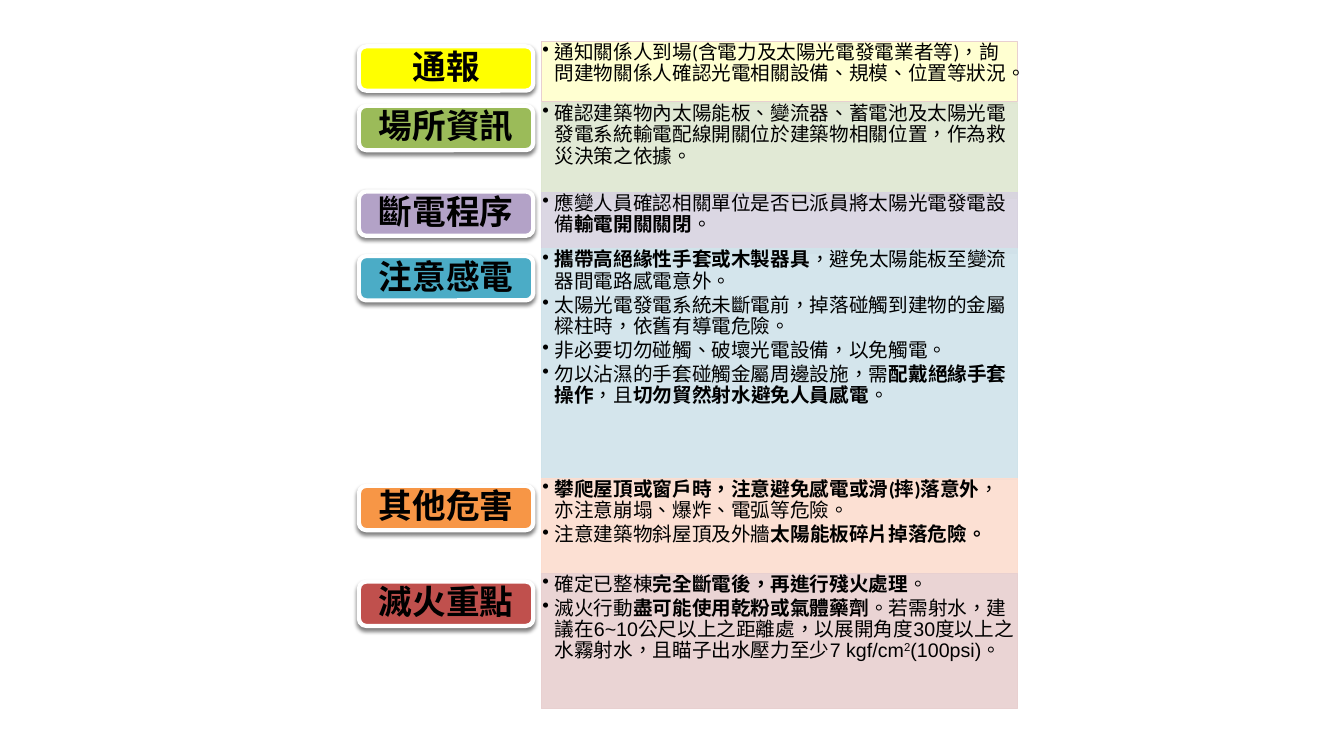
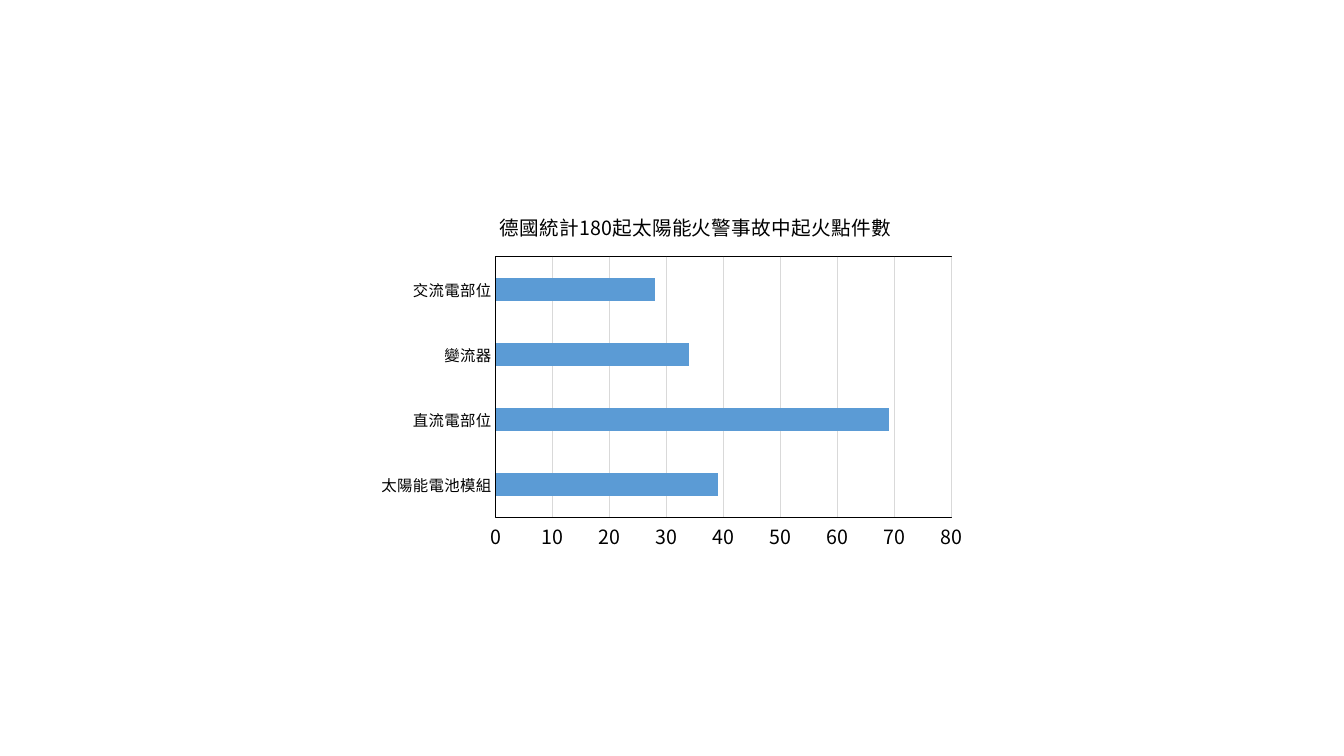
from lxml import etree
from pptx import Presentation
from pptx.chart.data import CategoryChartData
from pptx.dml.color import RGBColor
from pptx.enum.chart import XL_CHART_TYPE as ChartType, XL_TICK_MARK as TickMark
from pptx.enum.shapes import MSO_SHAPE as Shape
from pptx.enum.text import MSO_ANCHOR as Anchor, PP_ALIGN as Align
from pptx.oxml import parse_xml
from pptx.oxml.ns import nsdecls, qn
from pptx.util import Pt

SCALE = 9144
BLACK = RGBColor(0x00, 0x00, 0x00)
WHITE = RGBColor(0xFF, 0xFF, 0xFF)
YELLOW = RGBColor(0xFF, 0xFF, 0x00)
GREEN = RGBColor(0x9B, 0xBB, 0x59)
PURPLE = RGBColor(0xB3, 0xA2, 0xC7)
TEAL = RGBColor(0x4B, 0xAC, 0xC6)
ORANGE = RGBColor(0xF7, 0x96, 0x46)
RED = RGBColor(0xC0, 0x50, 0x4D)
PALE_YELLOW = RGBColor(0xFF, 0xFF, 0xCC)
PALE_GREEN = RGBColor(0xDE, 0xE7, 0xD1)
PALE_PURPLE = RGBColor(0xD8, 0xD3, 0xE0)
PALE_TEAL = RGBColor(0xD0, 0xE3, 0xEA)
PALE_ORANGE = RGBColor(0xFC, 0xDD, 0xCF)
PALE_RED = RGBColor(0xE8, 0xD0, 0xD0)
BAR_BLUE = RGBColor(0x5B, 0x9B, 0xD5)
GRID_GREY = RGBColor(0xD9, 0xD9, 0xD9)
LATIN, BRACKET, CJK = "Arial", "Calibri", "Noto Sans CJK SC"

PANEL_LEFT, PANEL_WIDTH = 537, 472
LABEL_LEFT, LABEL_WIDTH, LABEL_HEIGHT = 356, 173, 44

STEPS = [
    ("通報", 46, YELLOW, 41, 60, PALE_YELLOW, PALE_RED, BRACKET, [
        "通知關係人到場(含電力及太陽光電發電業者等)，詢問建物關係人確認光電相關設備、規模、位置等狀況。"]),
    ("場所資訊", 105, GREEN, 102, 95, PALE_GREEN, PALE_GREEN, LATIN, [
        "確認建築物內太陽能板、變流器、蓄電池及太陽光電發電系統輸電配線開關位於建築物相關位置，作為救災決策之依據。"]),
    ("斷電程序", 190, PURPLE, 191, 60, PALE_PURPLE, PALE_PURPLE, LATIN, [
        "應變人員確認相關單位是否已派員將太陽光電發電設備*輸電開關關閉*。"]),
    ("注意感電", 254, TEAL, 247, 229, PALE_TEAL, PALE_TEAL, LATIN, [
        "*攜帶高絕緣性手套或木製器具*，避免太陽能板至變流器間電路感電意外。",
        "太陽光電發電系統未斷電前，掉落碰觸到建物的金屬樑柱時，依舊有導電危險。",
        "非必要切勿碰觸、破壞光電設備，以免觸電。",
        "勿以沾濕的手套碰觸金屬周邊設施，需*配戴絕緣手套操作*，且*切勿貿然射水避免人員感電*。"]),
    ("其他危害", 482, ORANGE, 475, 94, PALE_ORANGE, PALE_ORANGE, BRACKET, [
        "*攀爬屋頂或窗戶時，注意避免感電或滑(摔)落意外*，亦注意崩塌、爆炸、電弧等危險。",
        "注意建築物斜屋頂及外牆*太陽能板碎片掉落危險。*"]),
    ("滅火重點", 577, RED, 569, 134, PALE_RED, PALE_RED, LATIN, [
        "確定已整棟*完全斷電後，再進行殘火處理*。",
        "滅火行動*盡可能使用乾粉或氣體藥劑*。若需射水，建議在6~10公尺以上之距離處，"
        "以展開角度30度以上之水霧射水，且瞄子出水壓力至少7 kgf/cm^2^(100psi)。"]),
]


def px(length):
    return length * SCALE


def apply(target, **values):
    for name, value in values.items():
        setattr(target, name, value)


def set_font(font, color=BLACK, **values):
    apply(font, **values)
    font.color.rgb = color


def manual_layout(x, y, width=None, height=None):
    sizes = {"x": x, "y": y, "w": width, "h": height}
    target = '<c:layoutTarget val="inner"/>' if width else ""
    modes = '<c:xMode val="edge"/><c:yMode val="edge"/>'
    values = "".join(f'<c:{name} val="{value}"/>'
                     for name, value in sizes.items() if value is not None)
    return parse_xml(f'<c:layout {nsdecls("c")}><c:manualLayout>{target}{modes}{values}'
                     '</c:manualLayout></c:layout>')


def place_layout(element, layout, after=None):
    for old in element.findall(qn("c:layout")):
        element.remove(old)
    if after is None:
        element.insert(0, layout)
    else:
        element.find(qn(after)).addnext(layout)


class Deck:
    def __init__(self):
        self.presentation = Presentation()
        apply(self.presentation, slide_width=px(1333), slide_height=px(750))
        self.slide = None

    def new_slide(self):
        self.slide = self.presentation.slides.add_slide(self.presentation.slide_layouts[6])

    def box(self, kind, left, top, width, height, fill, line, weight):
        shape = self.slide.shapes.add_shape(kind, px(left), px(top), px(width), px(height))
        shape.shadow.inherit = False
        shape.fill.solid()
        shape.fill.fore_color.rgb = fill
        shape.line.color.rgb = line
        shape.line.width = Pt(weight)
        shape.text_frame.word_wrap = True
        return shape

    def label(self, text, top, color):
        shape = self.box(Shape.ROUNDED_RECTANGLE, LABEL_LEFT, top, LABEL_WIDTH,
                         LABEL_HEIGHT, color, WHITE, 3)
        effects = shape._element.spPr.find(qn("a:effectLst"))
        effects.append(parse_xml(
            f'<a:outerShdw {nsdecls("a")} blurRad="38100" dist="25400" dir="5400000">'
            '<a:srgbClr val="000000"><a:alpha val="50000"/></a:srgbClr></a:outerShdw>'))
        apply(shape.text_frame, vertical_anchor=Anchor.MIDDLE, margin_top=0, margin_bottom=0)
        paragraph = shape.text_frame.paragraphs[0]
        apply(paragraph, text=text, alignment=Align.CENTER, line_spacing=0.9)
        set_font(paragraph.runs[0].font, name=LATIN, size=Pt(24), bold=True)

    def panel(self, items, top, height, fill, line, font_name):
        shape = self.box(Shape.RECTANGLE, PANEL_LEFT, top, PANEL_WIDTH, height, fill, line, 1)
        color = shape._element.spPr.find(qn("a:solidFill"))[0]
        etree.SubElement(color, qn("a:alpha")).set("val", "90000")
        frame = shape.text_frame
        apply(frame, vertical_anchor=Anchor.TOP, margin_left=px(1), margin_top=px(1),
              margin_right=px(1), margin_bottom=px(1))
        for index, item in enumerate(items):
            paragraph = frame.add_paragraph() if index else frame.paragraphs[0]
            self.bullet(paragraph, item, font_name)

    def bullet(self, paragraph, text, font_name):
        apply(paragraph, level=1, alignment=Align.LEFT, line_spacing=0.9, space_after=Pt(2))
        properties = paragraph._p.get_or_add_pPr()
        properties.set("marL", str(px(12)))
        properties.set("indent", str(px(-12)))
        etree.SubElement(properties, qn("a:buChar")).set("char", "•")
        for bold_index, part in enumerate(text.split("*")):
            for raised_index, piece in enumerate(part.split("^")):
                if not piece:
                    continue
                run = paragraph.add_run()
                run.text = piece
                set_font(run.font, name=font_name, size=Pt(14), bold=bold_index % 2 == 1)
                run.font._element.set("lang", "zh-TW")
                if raised_index % 2:
                    run.font._element.set("baseline", "30000")

    def bar_chart(self, title, categories, values, left, top, width, height):
        data = CategoryChartData()
        data.categories = categories
        data.add_series("Series 1", values)
        chart = self.slide.shapes.add_chart(ChartType.BAR_CLUSTERED, px(left), px(top),
                                            px(width), px(height), data).chart
        apply(chart, has_legend=False, has_title=True)
        set_font(chart.font, name=BRACKET, size=Pt(10))
        paragraph = chart.chart_title.text_frame.paragraphs[0]
        paragraph.text = title
        set_font(paragraph.runs[0].font, name=CJK, size=Pt(14), bold=False)
        place_layout(chart.chart_title._element, manual_layout(0.21, 0.02), "c:tx")
        plot = chart.plots[0]
        apply(plot, gap_width=182, vary_by_categories=False)
        bars = plot.series[0].format.fill
        bars.solid()
        bars.fore_color.rgb = BAR_BLUE
        for axis, size in ((chart.category_axis, 11), (chart.value_axis, 14)):
            apply(axis, major_tick_mark=TickMark.NONE, minor_tick_mark=TickMark.NONE)
            set_font(axis.tick_labels.font, name=CJK, size=Pt(size))
        chart.category_axis.format.line.color.rgb = BLACK
        chart.category_axis.format.line.width = Pt(0.75)
        axis = chart.value_axis
        apply(axis, minimum_scale=0, maximum_scale=80, major_unit=10)
        axis.format.line.fill.background()
        axis.major_gridlines.format.line.color.rgb = GRID_GREY
        axis.major_gridlines.format.line.width = Pt(0.75)
        plot_area = chart._chartSpace.chart.plotArea
        place_layout(plot_area, manual_layout(0.21, 0.16, 0.75, 0.73))
        plot_area.append(parse_xml(
            f'<c:spPr {nsdecls("c", "a")}><a:noFill/><a:ln w="9525"><a:solidFill>'
            f'<a:srgbClr val="{BLACK}"/></a:solidFill></a:ln></c:spPr>'))


def main():
    deck = Deck()
    deck.new_slide()
    for name, label_top, color, top, height, fill, line, font_name, items in STEPS:
        deck.panel(items, top, height, fill, line, font_name)
        deck.label(name, label_top, color)
    deck.new_slide()
    deck.bar_chart("德國統計180起太陽能火警事故中起火點件數",
                   ["太陽能電池模組", "直流電部位", "變流器", "交流電部位"],
                   [39, 69, 34, 28], 365, 198, 603, 354)
    deck.presentation.save("out.pptx")


if __name__ == "__main__":
    main()
